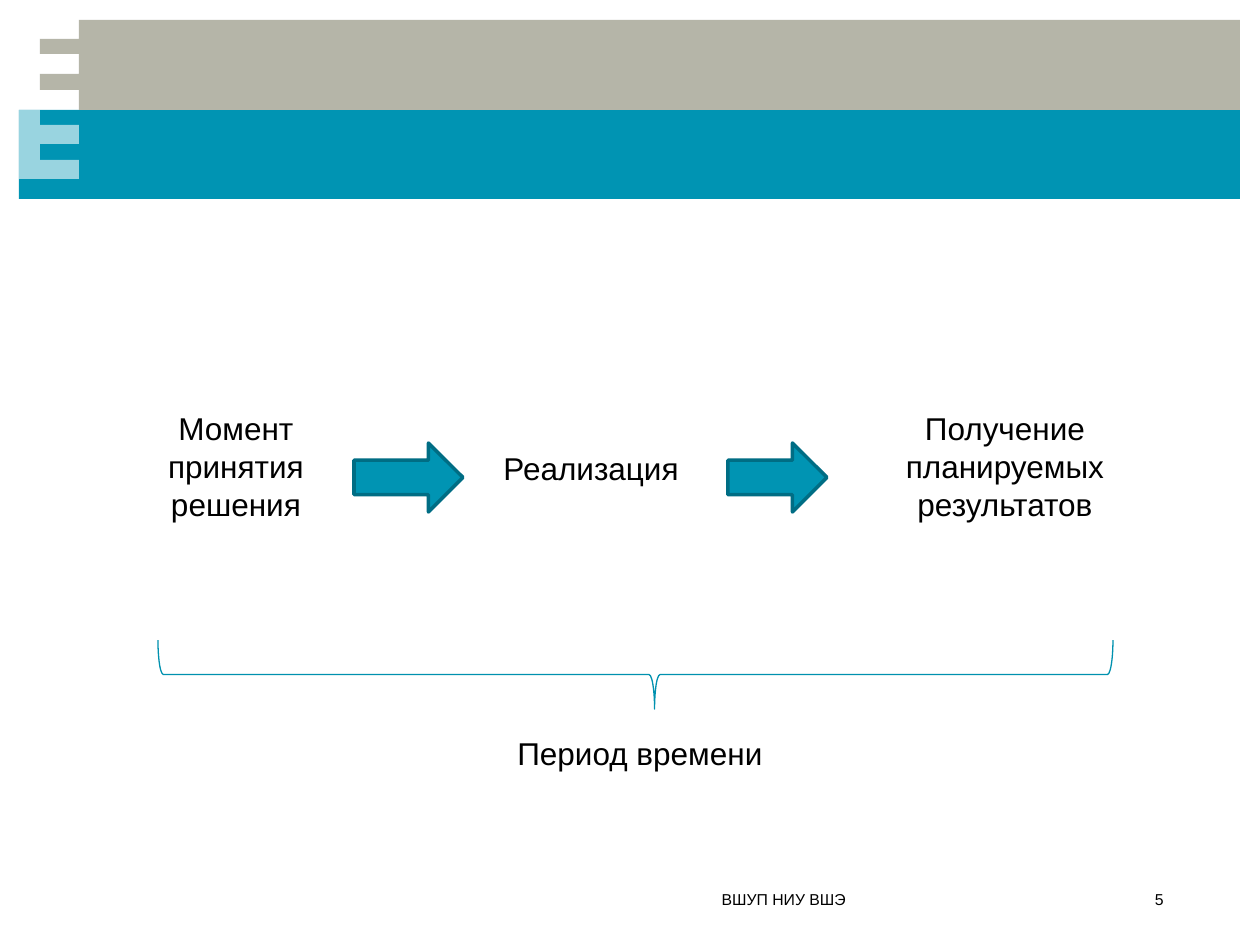
from lxml import etree
from pptx import Presentation
from pptx.dml.color import RGBColor
from pptx.enum.shapes import MSO_SHAPE
from pptx.enum.text import MSO_ANCHOR, PP_ALIGN
from pptx.oxml.ns import qn
from pptx.util import Pt

RECT = MSO_SHAPE.RECTANGLE
ARROW = MSO_SHAPE.RIGHT_ARROW
BRACE = MSO_SHAPE.LEFT_BRACE
TOP, MIDDLE = MSO_ANCHOR.TOP, MSO_ANCHOR.MIDDLE
CENTER, RIGHT = PP_ALIGN.CENTER, PP_ALIGN.RIGHT

SCALE = 914400 / 126
HEX = {"teal": "0094B3", "edge": "006D84", "brace": "0091AF",
       "grey": "B5B5A8", "white": "FFFFFF", "black": "000000"}
LABEL = {"name": "Arial", "size": Pt(18)}
FOOT = {"name": "Arial", "size": Pt(9)}


def px(num):
    return round(num * SCALE)


def tint(name):
    return RGBColor.from_string(HEX[name])


def paint(shape, fill=None, line=None, width=0):
    shape.shadow.inherit = False
    if fill:
        shape.fill.solid()
        shape.fill.fore_color.rgb = tint(fill)
    else:
        shape.fill.background()
    if line:
        shape.line.color.rgb = tint(line)
        shape.line.width = Pt(width)
    else:
        shape.line.fill.background()
    return shape


def add_form(slide, kind, box, **look):
    return paint(slide.shapes.add_shape(kind, *map(px, box)), **look)


def add_comb(slide, points, fill):
    build = slide.shapes.build_freeform(*points[0], scale=SCALE)
    build.add_line_segments(points[1:], close=True)
    return paint(build.convert_to_shape(), fill=fill)


def set_alpha(shape, percent):
    color = shape.fill._xPr.find(qn("a:solidFill"))[0]
    etree.SubElement(color, qn("a:alpha")).set("val", str(percent * 1000))


def add_text(slide, text, box, style, align=CENTER, anchor=TOP):
    frame = slide.shapes.add_textbox(*map(px, box)).text_frame
    frame.word_wrap = True
    frame.vertical_anchor = anchor
    para = frame.paragraphs[0]
    para.alignment = align
    run = para.add_run()
    run.text = text
    for key, value in style.items():
        setattr(run.font, key, value)
    run.font.color.rgb = tint("black")


def add_head(slide):
    add_form(slide, RECT, (19, 110, 1221, 89), fill="teal")
    add_comb(slide, [(79, 20), (1240, 20), (1240, 110), (79, 110), (79, 90),
                     (40, 90), (40, 74), (79, 74), (79, 54), (40, 54),
                     (40, 39), (79, 39)], "grey")
    comb = add_comb(slide, [(79, 179), (79, 160), (40, 160), (40, 144),
                            (79, 144), (79, 125), (40, 125), (40, 110),
                            (19, 110), (19, 179)], "white")
    set_alpha(comb, 60)


def add_flow(slide):
    for text, box in (
        ("Момент принятия решения", (147, 403, 178, 127)),
        ("Реализация ", (433, 443, 325, 50)),
        ("Получение планируемых результатов", (867, 403, 276, 127)),
        ("Период времени", (374, 728, 532, 50)),
    ):
        add_text(slide, text, box, LABEL)
    for left, width in ((354, 109), (728, 99)):
        add_form(slide, ARROW, (left, 443, width, 69),
                 fill="teal", line="edge", width=2)
    brace = add_form(slide, BRACE, (601, 197, 69, 955),
                     line="brace", width=0.75)
    brace.rotation = 270
    brace.adjustments[0] = 0.08
    brace.adjustments[1] = 0.52


def add_foot(slide):
    for text, left, width in (("ВШУП НИУ ВШЭ", 144, 714), ("5", 1116, 60)):
        add_text(slide, text, (left, 890, width, 19), FOOT, RIGHT, MIDDLE)


def main():
    deck = Presentation()
    deck.slide_width, deck.slide_height = px(1260), px(945)
    slide = deck.slides.add_slide(deck.slide_layouts[6])
    add_head(slide)
    add_flow(slide)
    add_foot(slide)
    deck.save("out.pptx")


if __name__ == "__main__":
    main()
